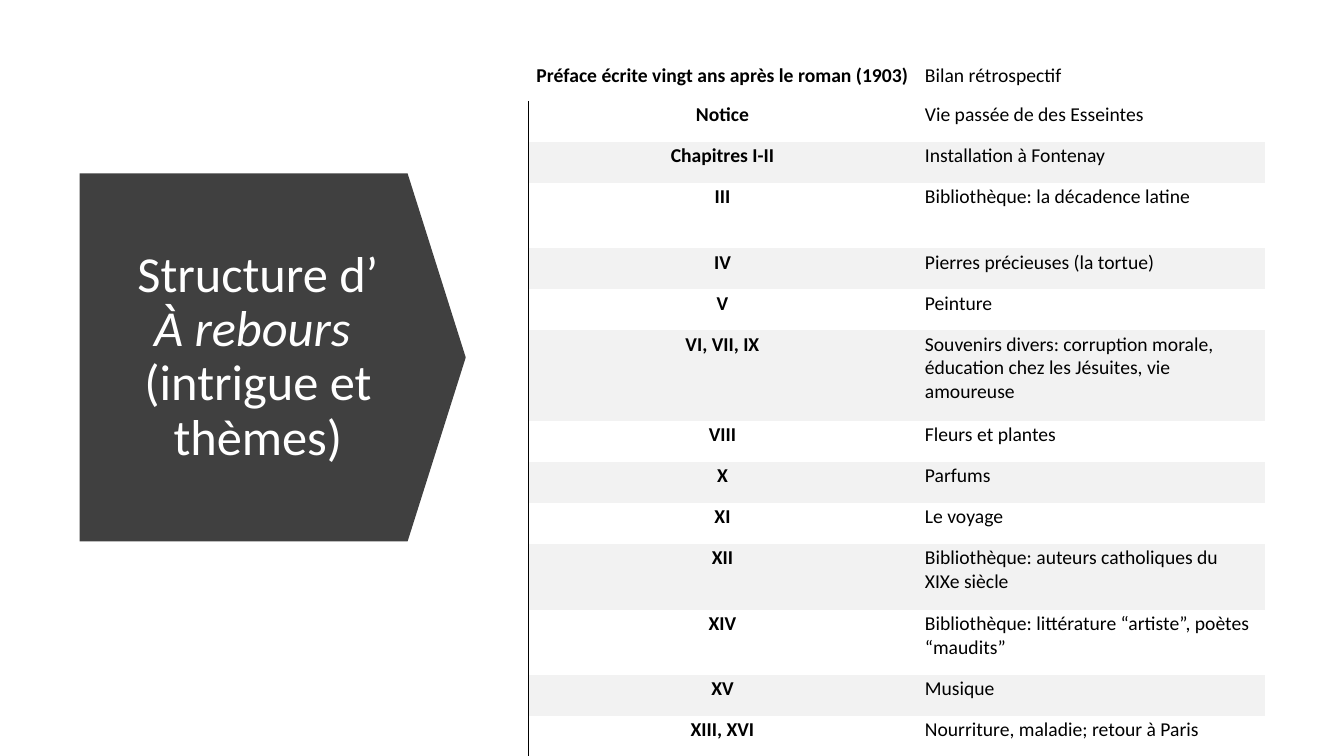
from dataclasses import dataclass

from lxml import etree
from pptx import Presentation
from pptx import util as u
from pptx.dml.color import RGBColor
from pptx.enum import shapes, text
from pptx.oxml import ns

Pt = u.Pt


@dataclass(frozen=True)
class Theme:
    font: str = "Calibri"
    title: float = 36
    body: float = 14
    dark: str = "404040"
    band: str = "F2F2F2"
    ink: str = "000000"
    light: str = "FFFFFF"


THEME = Theme()
LINE, DOUBLE = 29.3, 46.8  # common row heights

# Chapter, theme, row height
ROWS = [
    ("Préface écrite vingt ans après le roman (1903)", "Bilan rétrospectif", 50.4),
    ("Notice", "Vie passée de des Esseintes", LINE),
    ("Chapitres I-II", "Installation à Fontenay", LINE),
    ("III", "Bibliothèque: la décadence latine", DOUBLE),
    ("IV", "Pierres précieuses (la tortue)", LINE),
    ("V", "Peinture", LINE),
    ("VI, VII, IX", "Souvenirs divers: corruption morale, éducation chez "
     "les Jésuites, vie amoureuse", 64.8),
    ("VIII", "Fleurs et plantes", LINE),
    ("X", "Parfums", LINE),
    ("XI", "Le voyage", LINE),
    ("XII", "Bibliothèque: auteurs catholiques du XIXe siècle", DOUBLE),
    ("XIV", "Bibliothèque: littérature “artiste”, poètes “maudits”", DOUBLE),
    ("XV", "Musique", LINE),
    ("XIII, XVI", "Nourriture, maladie; retour à Paris", LINE),
]
COLS = (278.9, 247.2)


def style(font, size, color, bold=False, italic=False):
    font.name = THEME.font
    font.size = Pt(size)
    font.color.rgb = RGBColor.from_string(color)
    font.bold = bold
    font.italic = italic


def add_arrow(slide):
    arrow = slide.shapes.add_shape(
        shapes.MSO_SHAPE.DOWN_ARROW, Pt(63.4), Pt(117.4), Pt(262.8), Pt(275.8))
    arrow.rotation = 270
    arrow.adjustments[0] = 1
    arrow.adjustments[1] = 0.158
    arrow.shadow.inherit = False
    arrow.fill.solid()
    arrow.fill.fore_color.rgb = RGBColor.from_string(THEME.dark)
    arrow.line.fill.background()


def add_title(slide):
    box = slide.shapes.add_textbox(Pt(80.6), Pt(154.8), Pt(207.4), Pt(200.9))
    frame = box.text_frame
    frame.word_wrap = True
    frame.vertical_anchor = text.MSO_ANCHOR.MIDDLE
    para = frame.paragraphs[0]
    para.alignment = text.PP_ALIGN.CENTER
    para.line_spacing = 0.9
    style(para.font, THEME.title, THEME.light)
    for words, italic in (("Structure d’", False), (" À rebours ", True),
                          ("\v(intrigue et thèmes)", False)):
        if words.startswith("\v"):
            para.add_line_break()
        run = para.add_run()
        run.text = words.strip("\v")
        style(run.font, THEME.title, THEME.light, italic=italic)


def set_edges(cell, left):
    """Clear the cell borders, with an optional line on the left."""
    props = cell._tc.get_or_add_tcPr()
    for side in "LRTB":
        edge = etree.SubElement(props, ns.qn(f"a:ln{side}"), w=str(Pt(0.75)))
        if side == "L" and left:
            fill = etree.SubElement(edge, ns.qn("a:solidFill"))
            etree.SubElement(fill, ns.qn("a:srgbClr"), val=THEME.ink)
        else:
            etree.SubElement(edge, ns.qn("a:noFill"))


def fill_cell(cell, words, row, col):
    set_edges(cell, left=row > 0 and col == 0)
    if row > 0 and row % 2 == 0:
        cell.fill.solid()
        cell.fill.fore_color.rgb = RGBColor.from_string(THEME.band)
    else:
        cell.fill.background()
    cell.margin_left, cell.margin_top = Pt(4.5), Pt(1.5)
    cell.margin_right, cell.margin_bottom = Pt(5.8), Pt(9.4)
    anchor = text.MSO_ANCHOR
    cell.vertical_anchor = anchor.TOP if row else anchor.BOTTOM
    para = cell.text_frame.paragraphs[0]
    para.text = words
    align = text.PP_ALIGN
    para.alignment = align.LEFT if col else align.CENTER
    para.space_before = para.space_after = Pt(14)
    style(para.runs[0].font, THEME.body, THEME.ink, bold=col == 0)


def add_table(slide):
    high = sum(row[2] for row in ROWS)
    table = slide.shapes.add_table(
        len(ROWS), len(COLS), Pt(377.3), Pt(21.6), Pt(sum(COLS)), Pt(high)).table
    table.first_row = table.horz_banding = False
    for col, width in enumerate(COLS):
        table.columns[col].width = Pt(width)
    for row, (*cells, height) in enumerate(ROWS):
        table.rows[row].height = Pt(height)
        for col, words in enumerate(cells):
            fill_cell(table.cell(row, col), words, row, col)


def main():
    prs = Presentation()
    prs.slide_width, prs.slide_height = Pt(960), Pt(540)
    slide = prs.slides.add_slide(prs.slide_layouts[6])
    # Title on its arrow
    add_arrow(slide)
    add_title(slide)
    # Chapters and themes
    add_table(slide)
    prs.save("out.pptx")


if __name__ == "__main__":
    main()
